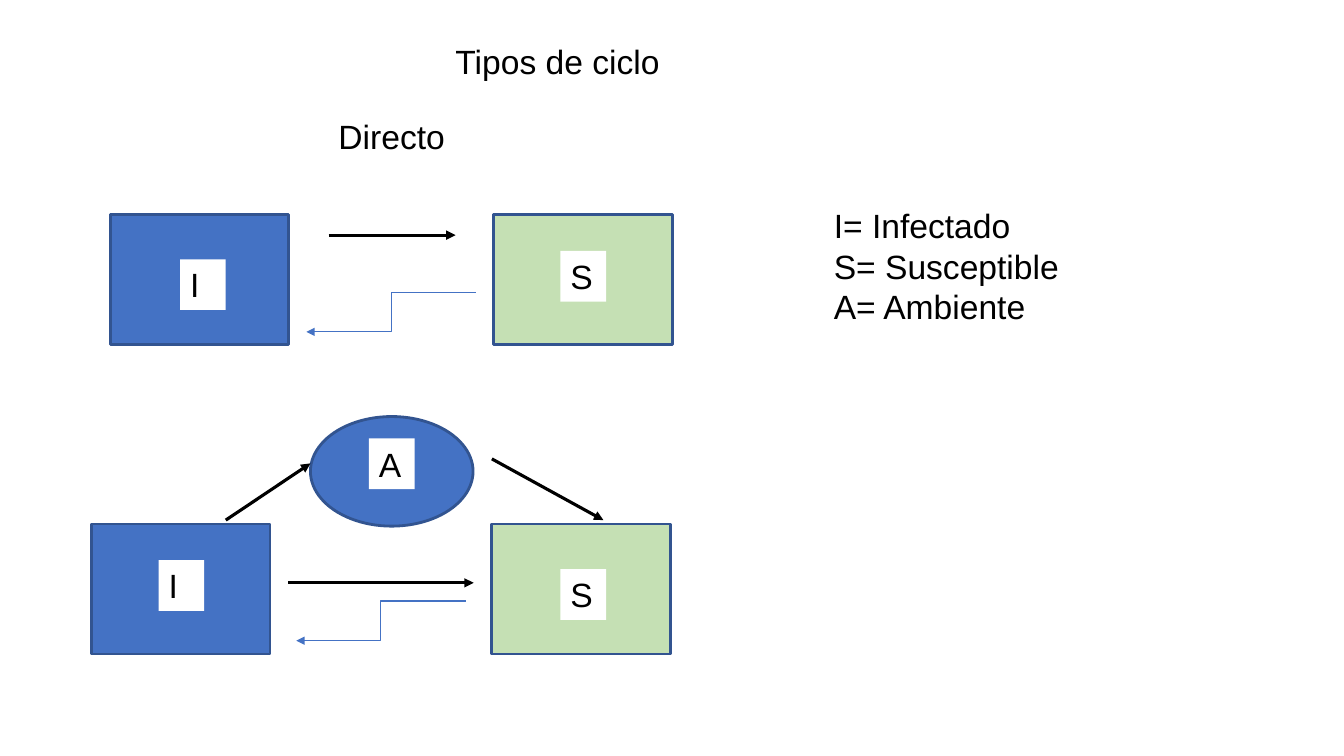
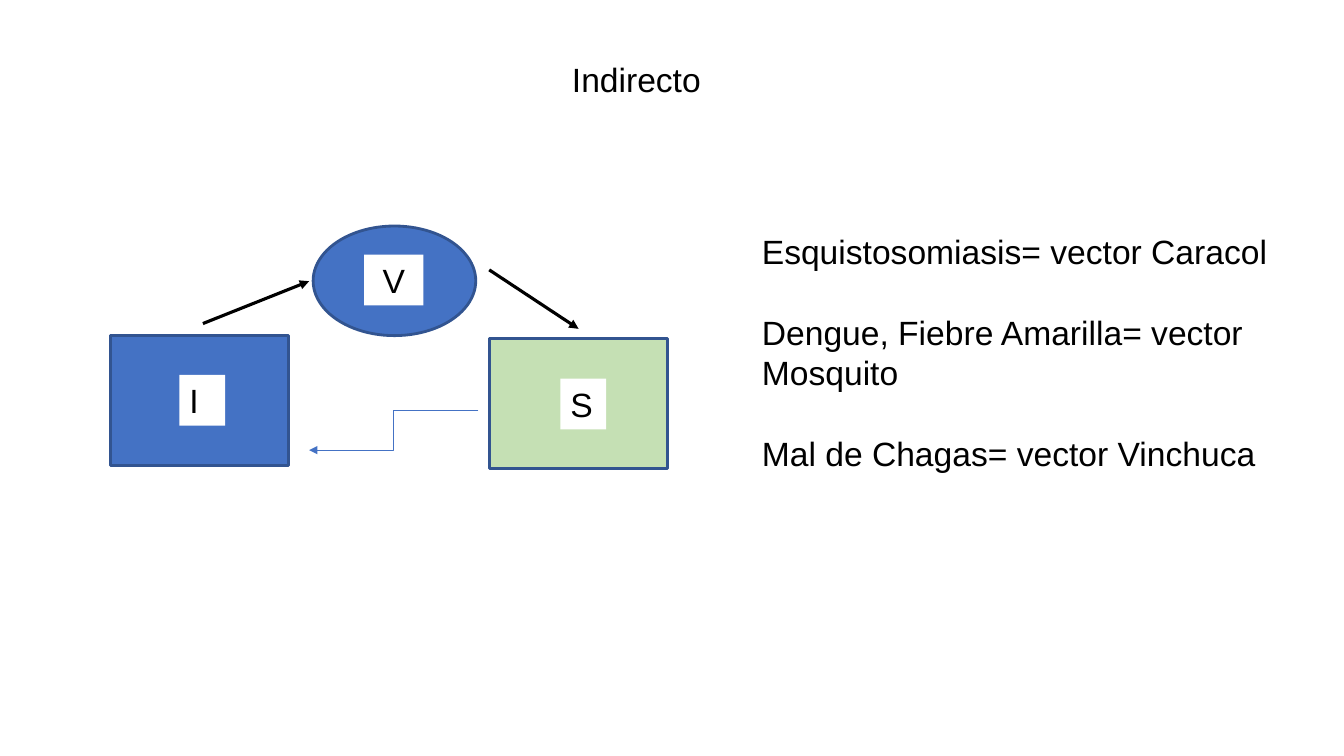
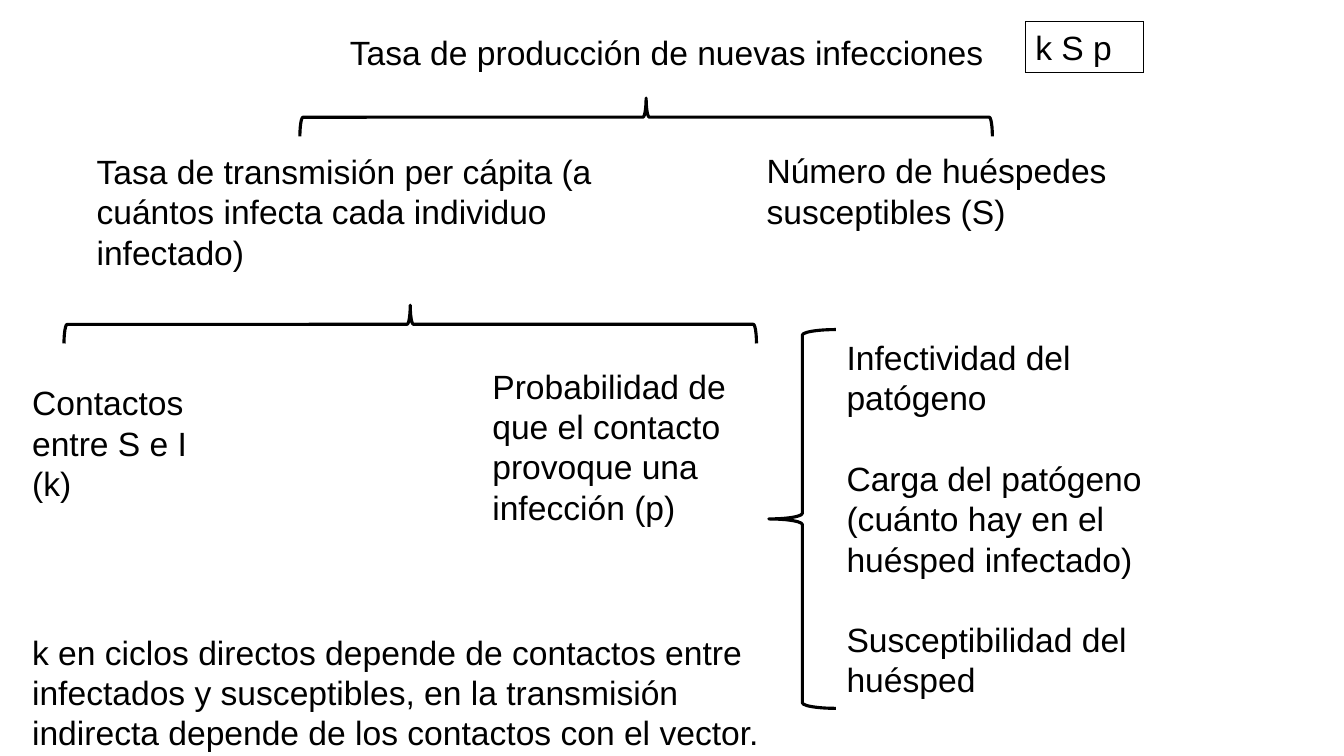
"""Build three slides on infection cycles and the rate of new infections."""
from lxml.etree import SubElement
from pptx import Presentation
from pptx.dml.color import RGBColor
from pptx.enum.shapes import MSO_CONNECTOR, MSO_SHAPE
from pptx.enum.text import MSO_ANCHOR, MSO_AUTO_SIZE, PP_ALIGN
from pptx.oxml.ns import qn
from pptx.util import Inches, Pt

COLORS = {key: RGBColor.from_string(value) for key, value in {
    "infected": "4472C4", "susceptible": "C5E0B4", "outline": "325490",
    "ink": "000000", "paper": "FFFFFF"}.items()}
FRAME_FORMAT = {
    "word_wrap": True, "auto_size": MSO_AUTO_SIZE.SHAPE_TO_FIT_TEXT,
    "vertical_anchor": MSO_ANCHOR.TOP,
    "margin_left": Inches(0.1), "margin_right": Inches(0.1),
    "margin_top": Inches(0.05), "margin_bottom": Inches(0.05)}
FONT_FORMAT = {"name": "Arial", "size": Pt(24)}
LINE_GAP = Pt(28.8)
BOX = (13.3, 17.2)
OVAL = (12.1, 14.5)
TAG_HEIGHT = 6.7
RETURN_SPAN = (12.6, 5.25)

presentation = Presentation()
presentation.slide_width = Inches(13.333)
presentation.slide_height = Inches(7.5)


def percent(*values):
    """Turn alternating shares of slide width and height into lengths."""
    sides = (presentation.slide_width, presentation.slide_height)
    return [round(value * sides[index % 2] / 100) for index, value in enumerate(values)]


def add_text(slide, frame, lines, alignment=PP_ALIGN.LEFT, gap=0):
    """Add a text box with one paragraph for each line."""
    shape = slide.shapes.add_textbox(*percent(*frame))
    for name, value in FRAME_FORMAT.items():
        setattr(shape.text_frame, name, value)
    shape.text_frame.text = "\n".join(lines)
    for index, paragraph in enumerate(shape.text_frame.paragraphs):
        paragraph.alignment = alignment
        paragraph.space_before = gap if index else 0
        for run in paragraph.runs:
            for name, value in FONT_FORMAT.items():
                setattr(run.font, name, value)
            run.font.color.rgb = COLORS["ink"]
    return shape


cycles = [
    {
        "nodes": [
            (MSO_SHAPE.RECTANGLE, "infected", 8.2, 28.4, BOX),
            (MSO_SHAPE.RECTANGLE, "susceptible", 36.75, 28.4, BOX),
            (MSO_SHAPE.OVAL, "infected", 23.1, 55.1, OVAL),
            (MSO_SHAPE.RECTANGLE, "infected", 6.8, 69.3, BOX),
            (MSO_SHAPE.RECTANGLE, "susceptible", 36.6, 69.3, BOX)],
        "tags": [
            ("I", 13.4, 34.3, 3.4), ("S", 41.7, 33.2, 3.4), ("A", 27.45, 58, 3.4),
            ("I", 11.8, 74.1, 3.4), ("S", 41.7, 75.3, 3.4)],
        "arrows": [
            (24.45, 31.1, 33.9, 31.1), (21.45, 77.1, 35.25, 77.1),
            (16.8, 68.8, 23.1, 61.3), (36.6, 60.7, 44.9, 68.8)],
        "returns": [(35.4, 38.65), (34.65, 79.5)],
        "texts": [
            ((33.15, 4.8, 19.2, 6.7), ["Tipos de ciclo"]),
            ((24.45, 14.7, 19.2, 6.7), ["Directo"]),
            ((61.3, 26.5, 29.1, 17.3), ["I= Infectado", "S= Susceptible", "A= Ambiente"])],
    },
    {
        "nodes": [
            (MSO_SHAPE.RECTANGLE, "infected", 8.2, 44.4, BOX),
            (MSO_SHAPE.OVAL, "infected", 23.3, 29.9, OVAL),
            (MSO_SHAPE.RECTANGLE, "susceptible", 36.4, 44.8, BOX)],
        "tags": [("I", 13.35, 49.6, 3.4), ("S", 41.7, 50.1, 3.4), ("V", 27.1, 33.7, 4.4)],
        "arrows": [(15.1, 42.8, 23, 37.2), (36.4, 35.7, 43.05, 43.5)],
        "returns": [(35.6, 54.3)],
        "texts": [
            ((40.2, 7.2, 14.3, 6.7), ["Indirecto"], PP_ALIGN.CENTER),
            ((55.95, 29.9, 41.55, 33.3), [
                "Esquistosomiasis= vector Caracol",
                "Dengue, Fiebre Amarilla= vector Mosquito",
                "Mal de Chagas= vector Vinchuca"], PP_ALIGN.LEFT, LINE_GAP)],
    },
]
rate_texts = [
    ((25.3, 3.5, 49.4, 6.7), ["Tasa de producción de nuevas infecciones"]),
    ((6.45, 19.3, 39, 17.3),
     ["Tasa de transmisión per cápita (a cuántos infecta cada individuo infectado)"]),
    ((56.3, 19.2, 31.3, 12), ["Número de huéspedes susceptibles (S)"]),
    ((1.65, 49.9, 17.85, 17.3), ["Contactos entre S e I", "(k)"]),
    ((35.9, 47.7, 22.3, 22.7), ["Probabilidad de que el contacto provoque una infección (p)"]),
    ((62.25, 43.9, 28.05, 49.3), [
        "Infectividad del patógeno",
        "Carga del patógeno (cuánto hay en el huésped infectado)",
        "Susceptibilidad del huésped"], PP_ALIGN.LEFT, LINE_GAP),
    ((1.65, 82.9, 58.6, 17.3), [
        "k en ciclos directos depende de contactos entre infectados y susceptibles, "
        "en la transmisión indirecta depende de los contactos con el vector."]),
]
braces = [
    ((57.2, 43.6, 5, 50.1), 0),
    ((46.65, -30.3, 2.85, 91.6), 90),
    ((29.1, -2.9, 2.85, 91.6), 90),
]

blank_layout = presentation.slide_layouts[6]
for cycle in cycles:
    slide = presentation.slides.add_slide(blank_layout)
    for kind, color, left, top, size in cycle["nodes"]:
        shape = slide.shapes.add_shape(kind, *percent(left, top, *size))
        shape.shadow.inherit = False
        shape.fill.solid()
        shape.fill.fore_color.rgb = COLORS[color]
        shape.line.color.rgb = COLORS["outline"]
        shape.line.width = Pt(2)
    for letter, left, top, width in cycle["tags"]:
        alignment = PP_ALIGN.CENTER if letter == "V" else PP_ALIGN.LEFT
        tag = add_text(slide, (left, top, width, TAG_HEIGHT), [letter], alignment)
        tag.fill.solid()
        tag.fill.fore_color.rgb = COLORS["paper"]
    links = [(MSO_CONNECTOR.STRAIGHT, ends, "ink", 2.25) for ends in cycle["arrows"]]
    for left, top in cycle["returns"]:
        ends = (left, top, left - RETURN_SPAN[0], top + RETURN_SPAN[1])
        links.append((MSO_CONNECTOR.ELBOW, ends, "infected", 0.75))
    for kind, ends, color, weight in links:
        connector = slide.shapes.add_connector(kind, *percent(*ends))
        connector.line.color.rgb = COLORS[color]
        connector.line.width = Pt(weight)
        SubElement(connector.line._get_or_add_ln(), qn("a:tailEnd"), type="triangle")
        SubElement(connector._element.spPr, qn("a:effectLst"))
    for text in cycle["texts"]:
        add_text(slide, *text)

slide = presentation.slides.add_slide(blank_layout)
for text in rate_texts:
    add_text(slide, *text)
formula = add_text(slide, (76.3, 2.9, 8.8, 6.7), ["k S p"])
formula.line.color.rgb = COLORS["ink"]
formula.line.width = Pt(0)
for frame, rotation in braces:
    brace = slide.shapes.add_shape(MSO_SHAPE.LEFT_BRACE, *percent(*frame))
    brace.shadow.inherit = False
    brace.rotation = rotation
    brace.adjustments[0] = 0.083
    brace.fill.background()
    brace.line.color.rgb = COLORS["ink"]
    brace.line.width = Pt(2.25)

presentation.save("out.pptx")
